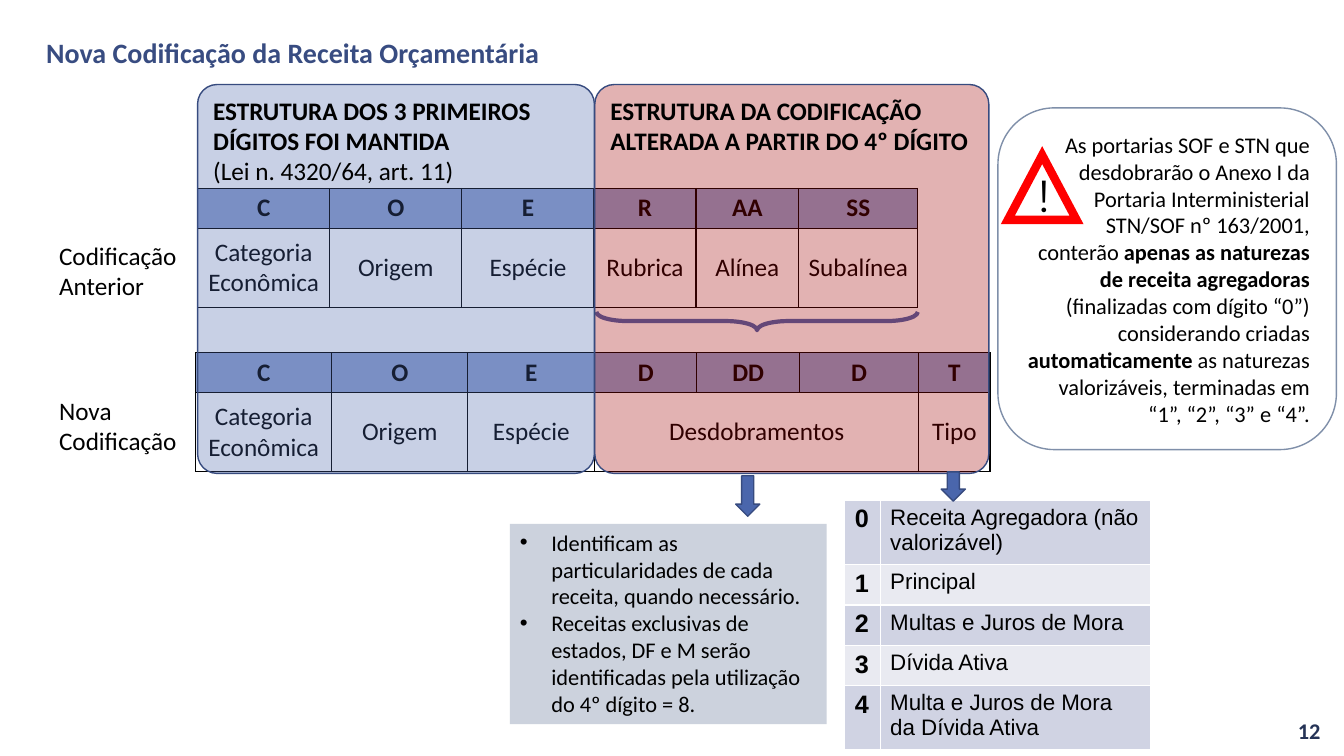
from lxml import etree
from pptx import Presentation
from pptx.dml.color import RGBColor
from pptx.enum.shapes import MSO_SHAPE
from pptx.enum.text import MSO_ANCHOR, MSO_AUTO_SIZE, PP_ALIGN
from pptx.oxml.ns import qn
from pptx.util import Cm, Pt

BLACK, WHITE, BLUE, NAVY = "000000", "FFFFFF", "4A66AC", "374B7F"
HEADER, BAND_DARK, BAND_LIGHT = "90A2CF", "D0D3E3", "E9EAF1"


def rgb(value):
    """Turn a hex string into a colour."""
    return RGBColor.from_string(value)


def write(tf, paragraphs, size, bold=False, color=BLACK, font="Calibri",
          align=PP_ALIGN.LEFT, anchor=MSO_ANCHOR.TOP):
    """Fill a text frame; a paragraph is a string or a list of (text, bold) runs."""
    tf.word_wrap = True
    tf.vertical_anchor = anchor
    for i, runs in enumerate(paragraphs):
        p = tf.paragraphs[0] if i == 0 else tf.add_paragraph()
        p.alignment = align
        for text, heavy in [(runs, bold)] if isinstance(runs, str) else runs:
            r = p.add_run()
            r.text = text
            r.font.name, r.font.size, r.font.bold = font, Pt(size), heavy
            r.font.color.rgb = rgb(color)


def place(sp, left, top, width, height):
    """Move and size a shape in centimetres."""
    sp.left, sp.top, sp.width, sp.height = map(Cm, (left, top, width, height))


def add_label(slide, box, paragraphs, size, **style):
    """Add a text box."""
    sp = slide.shapes.add_textbox(*map(Cm, box))
    write(sp.text_frame, paragraphs, size, **style)


def add_figure(slide, kind, box, fill=None, line=NAVY, weight=1, alpha=None, adj=()):
    """Add a preset shape with its fill, outline and adjustments."""
    sp = slide.shapes.add_shape(kind, *map(Cm, box))
    sp.shadow.inherit = False
    if fill:
        sp.fill.solid()
        sp.fill.fore_color.rgb = rgb(fill)
    else:
        sp.fill.background()
    if alpha:
        clr = sp.fill._xPr.find(qn("a:solidFill"))[0]
        etree.SubElement(clr, qn("a:alpha")).set("val", str(alpha * 1000))
    sp.line.color.rgb = rgb(line)
    sp.line.width = Pt(weight)
    for i, value in enumerate(adj):
        sp.adjustments[i] = value
    return sp


def set_borders(cell, color):
    """Draw a one-point border round a cell."""
    tcPr = cell._tc.get_or_add_tcPr()
    for i, side in enumerate(("lnL", "lnR", "lnT", "lnB")):
        ln = etree.Element(qn(f"a:{side}"), w=str(Pt(1)))
        fill = etree.SubElement(ln, qn("a:solidFill"))
        etree.SubElement(fill, qn("a:srgbClr"), val=color)
        tcPr.insert(i, ln)


def add_grid(slide, left, top, widths, heights, border):
    """Add an unstyled table with bordered cells."""
    frame = slide.shapes.add_table(len(heights), len(widths), Cm(left), Cm(top),
                                   Cm(sum(widths)), Cm(sum(heights)))
    table = frame.table
    table.first_row = table.horz_banding = False
    for col, width in zip(table.columns, widths):
        col.width = Cm(width)
    for row, height in zip(table.rows, heights):
        row.height = Cm(height)
    for cell in table.iter_cells():
        cell.fill.background()
        set_borders(cell, border)
    return table


def paint(cell, color):
    """Give a cell a solid fill."""
    cell.fill.solid()
    cell.fill.fore_color.rgb = rgb(color)


def add_coding(slide, left, top, widths, codes, names, merge=None):
    """Add a table of code letters over their names."""
    table = add_grid(slide, left, top, widths, (1, 2), BLACK)
    if merge:
        table.cell(1, merge[0]).merge(table.cell(1, merge[1]))
    for r, texts in enumerate((codes, names)):
        for c, text in enumerate(texts):
            cell = table.cell(r, c)
            cell.margin_left = cell.margin_right = Cm(0.18)
            cell.margin_top = cell.margin_bottom = 0
            cell.vertical_anchor = MSO_ANCHOR.MIDDLE
            if r == 0:
                paint(cell, HEADER)
            if text:
                write(cell.text_frame, [text], 18, bold=r == 0,
                      align=PP_ALIGN.CENTER, anchor=MSO_ANCHOR.MIDDLE)


def add_types(slide, names):
    """Add the banded table of revenue types."""
    table = add_grid(slide, 21.29, 12.6, (0.89, 6.81),
                     (1.63, 0.94, 0.94, 0.94, 1.3), WHITE)
    for i, name in enumerate(names):
        for cell, text, size in zip(table.rows[i].cells, (str(i), name), (18, 16)):
            paint(cell, BAND_LIGHT if i % 2 else BAND_DARK)
            write(cell.text_frame, [text], size, bold=size == 18, font="Arial")


def fill_title(sp, text):
    """Place and write the title."""
    place(sp, 0.91, -0.48, 29.21, 3.68)
    write(sp.text_frame, [text], 20, True, "384C81", anchor=MSO_ANCHOR.MIDDLE)
    sp.text_frame.paragraphs[0].line_spacing = 0.9


def fill_details(sp, items):
    """Place and write the bulleted list."""
    place(sp, 12.85, 13.2, 7.98, 5.05)
    sp.fill.solid()
    sp.fill.fore_color.rgb = rgb("CCD2DD")
    write(sp.text_frame, items, 16)
    sp.text_frame.auto_size = MSO_AUTO_SIZE.NONE
    for p in sp.text_frame.paragraphs:
        p.space_before = Pt(0)
        pPr = p._p.get_or_add_pPr()
        pPr.set("marL", str(Cm(0.79)))
        pPr.set("indent", str(-Cm(0.79)))


def add_warning(slide):
    """Add the note with its warning triangle."""
    sp = add_figure(slide, MSO_SHAPE.ROUNDED_RECTANGLE, (25.15, 2.72, 8.53, 8.61),
                    WHITE, "7F8FA9")
    write(sp.text_frame, [[
        ("As portarias SOF e STN que desdobrarão o Anexo I da Portaria "
         "Interministerial STN/SOF nº 163/2001, conterão ", False),
        ("apenas as naturezas de receita agregadoras ", True),
        ("(finalizadas com dígito “0”) considerando criadas ", False),
        ("automaticamente", True),
        (" as naturezas valorizáveis, terminadas em “1”, “2”, “3” e “4”.", False),
    ]], 16, align=PP_ALIGN.RIGHT, anchor=MSO_ANCHOR.MIDDLE)
    sign = add_figure(slide, MSO_SHAPE.ISOSCELES_TRIANGLE, (25.4, 3.91, 1.73, 1.63),
                      WHITE, "FF0000", 6)
    etree.SubElement(sign.line._get_or_add_ln(), qn("a:miter")).set("lim", "800000")
    add_label(slide, (25.91, 4.11, 0.71, 2.24), ["!"], 32, font="Montserrat",
              align=PP_ALIGN.CENTER)


def main():
    """Build the slide and save it."""
    prs = Presentation()
    prs.slide_width, prs.slide_height = Cm(33.87), Cm(19.05)
    slide = prs.slides.add_slide(prs.slide_layouts[1])
    fill_title(slide.shapes.title, "Nova Codificação da Receita Orçamentária")
    fill_details(slide.placeholders[1], [
        "Identificam as particularidades de cada receita, quando necessário.",
        "Receitas exclusivas de estados, DF e M serão identificadas pela "
        "utilização do 4º dígito = 8."])
    add_label(slide, (25.91, 17.91, 7.62, 1.02), ["12"], 16, bold=True,
              color="253356", align=PP_ALIGN.RIGHT, anchor=MSO_ANCHOR.MIDDLE)

    kept = ["Categoria Econômica", "Origem", "Espécie"]
    add_coding(slide, 4.93, 8.89, (3.43, 3.43, 3.2, 2.57, 2.59, 3, 1.8),
               ["C", "O", "E", "D", "DD", "D", "T"],
               kept + ["Desdobramentos", "", "", "Tipo"], merge=(3, 5))
    add_coding(slide, 4.98, 4.75, (3.33, 3.33, 3.33, 2.57, 2.59, 3),
               ["C", "O", "E", "R", "AA", "SS"],
               kept + ["Rubrica", "Alínea", "Subalínea"])
    brace = add_figure(slide, MSO_SHAPE.LEFT_BRACE, (18.85, 4.04, 0.46, 8.1),
                       line=BLUE, weight=3, adj=(1.71, 0.5))
    brace.rotation = 270

    panels = [
        (4.98, 10, BLUE, 0.05, ["ESTRUTURA DOS 3 PRIMEIROS DÍGITOS FOI MANTIDA",
                                [("(Lei n. 4320/64, art. 11)", False)]]),
        (14.99, 9.93, "A20000", 0.05,
         ["ESTRUTURA DA CODIFICAÇÃO ALTERADA A PARTIR DO 4º DÍGITO"])]
    for left, width, color, corner, texts in panels:
        sp = add_figure(slide, MSO_SHAPE.ROUNDED_RECTANGLE, (left, 2.13, width, 9.8),
                        color, alpha=30, adj=(corner,))
        write(sp.text_frame, texts, 18, bold=True)

    add_types(slide, ["Receita Agregadora (não valorizável)", "Principal",
                      "Multas e Juros de Mora", "Dívida Ativa",
                      "Multa e Juros de Mora da Dívida Ativa"])
    add_label(slide, (1.24, 5.92, 3.68, 1.8), ["Codificação", "Anterior"], 18)
    add_label(slide, (1.24, 9.83, 3.53, 1.8), ["Nova Codificação"], 18)
    add_warning(slide)
    for box in ((18.54, 11.99, 0.61, 1.02), (23.72, 11.89, 0.61, 0.74)):
        add_figure(slide, MSO_SHAPE.DOWN_ARROW, box, BLUE)
    prs.save("out.pptx")


if __name__ == "__main__":
    main()
